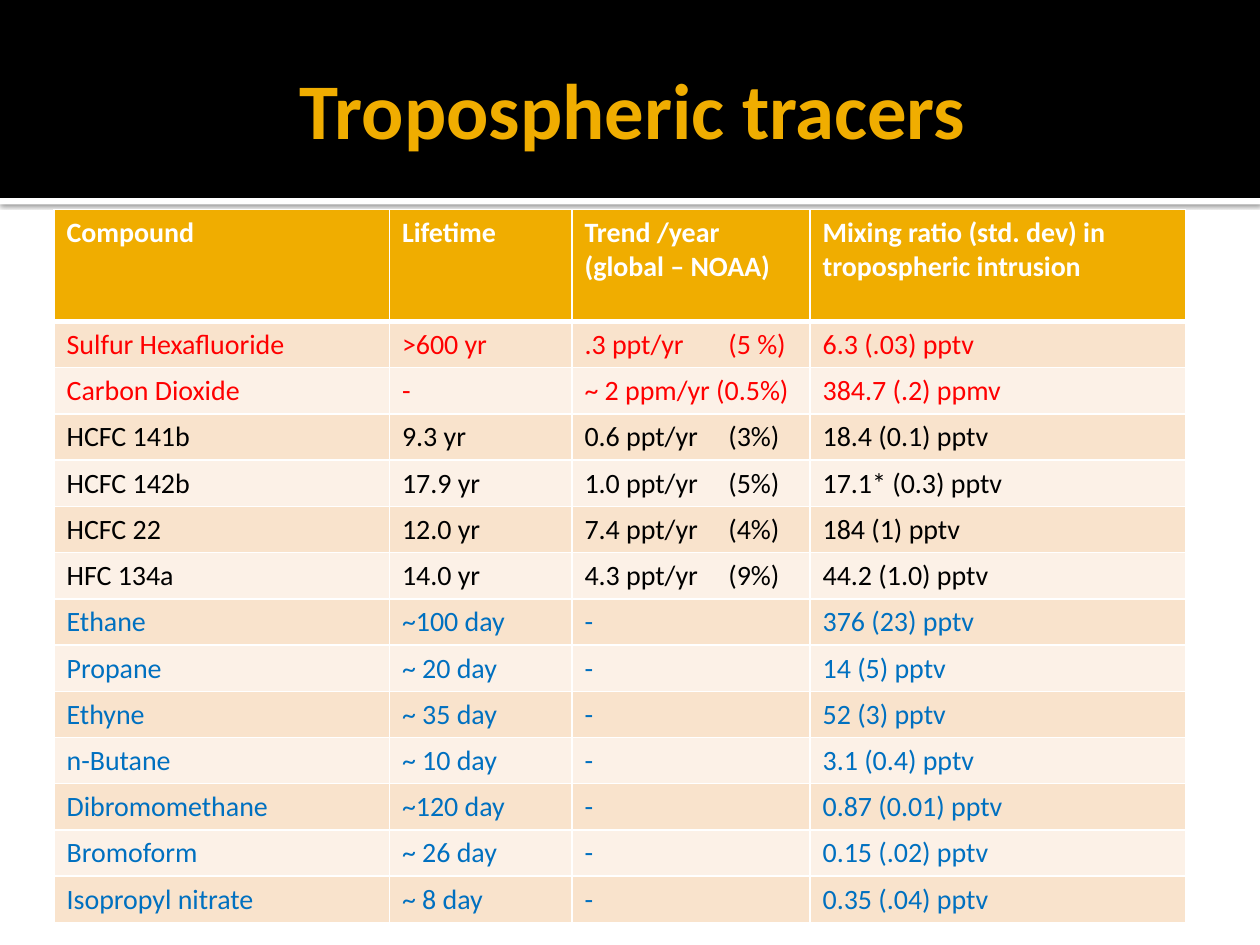
from lxml.etree import SubElement
from pptx import Presentation
from pptx.dml.color import RGBColor
from pptx.enum.shapes import MSO_SHAPE
from pptx.enum.text import MSO_ANCHOR, PP_ALIGN
from pptx.oxml.ns import qn
from pptx.util import Cm, Pt

FONT = "Calibri"
WHITE, BLACK, GOLD = "FFFFFF", "000000", "F0AD00"
RED, BLUE = "FF0000", "0070C0"
BANDS = ["F9E3CC", "FCF1E7"]

COLUMN_WIDTHS = [6.76, 3.68, 4.8, 7.57]
HEADER_HEIGHT, ROW_HEIGHT = 2.26, 0.93
PERCENT_TAB = 2.9

HEADER = ["Compound", "Lifetime", "Trend /year\n(global – NOAA)",
          "Mixing ratio (std. dev) in tropospheric intrusion"]
GROUPS = [
    (RED, [
        ["Sulfur Hexafluoride", ">600 yr", ".3 ppt/yr\t(5 %)", "6.3 (.03) pptv"],
        ["Carbon Dioxide", "-", "~ 2 ppm/yr (0.5%)", "384.7 (.2) ppmv"],
    ]),
    (BLACK, [
        ["HCFC 141b", "9.3 yr", "0.6 ppt/yr\t(3%)", "18.4 (0.1) pptv"],
        ["HCFC 142b", "17.9 yr", "1.0 ppt/yr\t(5%)", "17.1* (0.3) pptv"],
        ["HCFC 22", "12.0 yr", "7.4 ppt/yr\t(4%)", "184 (1) pptv"],
        ["HFC 134a", "14.0 yr", "4.3 ppt/yr\t(9%)", "44.2 (1.0) pptv"],
    ]),
    (BLUE, [
        ["Ethane", "~100 day", "-", "376 (23) pptv"],
        ["Propane", "~ 20 day", "-", "14 (5) pptv"],
        ["Ethyne", "~ 35 day", "-", "52 (3) pptv"],
        ["n-Butane", "~ 10 day", "-", "3.1 (0.4) pptv"],
        ["Dibromomethane", "~120 day", "-", "0.87 (0.01) pptv"],
        ["Bromoform", "~ 26 day", "-", "0.15 (.02) pptv"],
        ["Isopropyl nitrate", "~ 8 day", "-", "0.35 (.04) pptv"],
    ]),
]


def rgb(color):
    return RGBColor.from_string(color)


def add_run(p, text, size, color, bold=False):
    r = p.add_run()
    r.text = text
    r.font.name = FONT
    r.font.size = Pt(size)
    r.font.bold = bold
    r.font.color.rgb = rgb(color)


def add_band(s, top, height, color):
    """Draw a full-width bar without outline."""
    sp = s.shapes.add_shape(MSO_SHAPE.RECTANGLE, Cm(0), Cm(top), Cm(25.4), Cm(height))
    sp.shadow.inherit = False
    sp.fill.solid()
    sp.fill.fore_color.rgb = rgb(color)
    sp.line.fill.background()
    return sp


def add_shadow(sp):
    """Cast a soft shadow straight down."""
    effects = sp._element.spPr.find(qn("a:effectLst"))
    shadow = SubElement(effects, qn("a:outerShdw"), blurRad=str(Pt(2.5)),
                        dist=str(Pt(0.8)), dir="5400000", algn="tl", rotWithShape="0")
    color = SubElement(shadow, qn("a:srgbClr"), val=BLACK)
    SubElement(color, qn("a:alpha"), val="60000")


def add_title(s, text):
    sp = s.shapes.add_textbox(Cm(1.27), Cm(0.43), Cm(22.86), Cm(3.48))
    tf = sp.text_frame
    tf.word_wrap = True
    tf.vertical_anchor = MSO_ANCHOR.MIDDLE
    tf.margin_right = Cm(0.13)
    p = tf.paragraphs[0]
    p.alignment = PP_ALIGN.CENTER
    add_run(p, text, 45, GOLD, bold=True)


def set_borders(cell, top, bottom):
    tcPr = cell._tc.get_or_add_tcPr()
    for side, width in [("L", 1), ("R", 1), ("T", top), ("B", bottom)]:
        ln = SubElement(tcPr, qn(f"a:ln{side}"), w=str(Pt(width)))
        SubElement(SubElement(ln, qn("a:solidFill")), qn("a:srgbClr"), val=WHITE)


def add_tab_stop(p, position):
    tabs = SubElement(p._p.get_or_add_pPr(), qn("a:tabLst"))
    SubElement(tabs, qn("a:tab"), pos=str(Cm(position)), algn="l")


def fill_row(table, row, texts, fill, color):
    is_header = row == 0
    for col, text in enumerate(texts):
        cell = table.cell(row, col)
        set_borders(cell, top=3 if row == 1 else 1, bottom=3 if is_header else 1)
        cell.fill.solid()
        cell.fill.fore_color.rgb = rgb(fill)
        tf = cell.text_frame
        for i, line in enumerate(text.split("\n")):
            p = tf.add_paragraph() if i else tf.paragraphs[0]
            if "\t" in line:
                add_tab_stop(p, PERCENT_TAB)
            add_run(p, line, 16, color, bold=is_header)


def add_tracer_table(s):
    rows = [(color, texts) for color, group in GROUPS for texts in group]
    height = HEADER_HEIGHT + ROW_HEIGHT * len(rows)
    table = s.shapes.add_table(len(rows) + 1, len(HEADER), Cm(1.09), Cm(4.22),
                               Cm(sum(COLUMN_WIDTHS)), Cm(height)).table
    for column, width in zip(table.columns, COLUMN_WIDTHS):
        column.width = Cm(width)
    for i, row in enumerate(table.rows):
        row.height = Cm(ROW_HEIGHT if i else HEADER_HEIGHT)
    fill_row(table, 0, HEADER, GOLD, WHITE)
    for i, (color, texts) in enumerate(rows):
        fill_row(table, i + 1, texts, BANDS[i % 2], color)


def main():
    prs = Presentation()
    prs.slide_width, prs.slide_height = Cm(25.4), Cm(19.05)
    s = prs.slides.add_slide(prs.slide_layouts[6])
    add_shadow(add_band(s, 3.99, 0.13, WHITE))
    add_band(s, 0, 3.99, BLACK)
    add_title(s, "Tropospheric tracers")
    add_tracer_table(s)
    prs.save("out.pptx")


if __name__ == "__main__":
    main()
